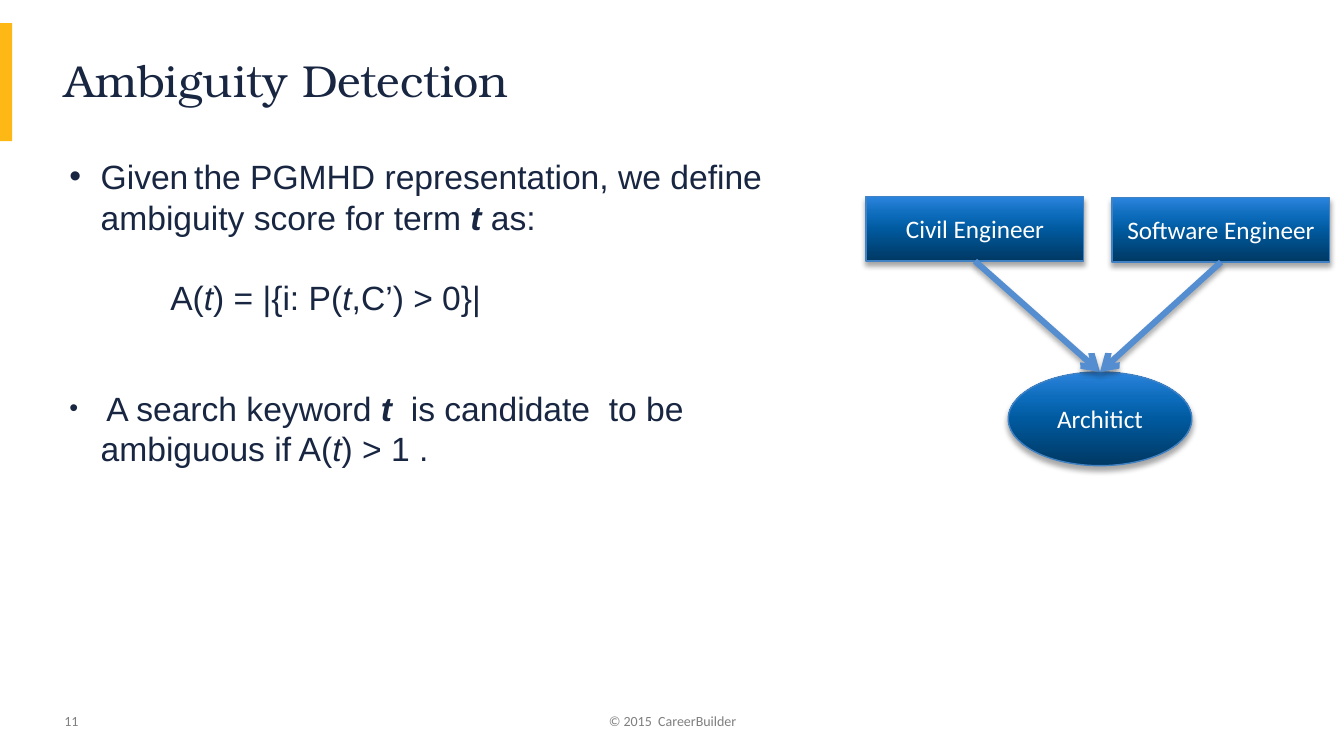
from pptx import Presentation
from pptx.dml.color import RGBColor
from pptx.enum.shapes import MSO_CONNECTOR, MSO_SHAPE
from pptx.enum.text import MSO_ANCHOR, PP_ALIGN
from pptx.oxml import parse_xml
from pptx.oxml.ns import nsdecls
from pptx.util import Inches, Pt

NAVY, GOLD, WHITE = "182642", "FDB816", "FFFFFF"
STOPS = [(0, "003863"), (50, "005A9F"), (70, "0B6AB9"), (100, "2B84DC")]


def rgb(code):
    return RGBColor.from_string(code)


def put(parent, xml, spot=None):
    tag, rest = xml.split(" ", 1)
    node = parse_xml(f"{tag} {nsdecls('a')} {rest}")
    parent.insert(len(parent) if spot is None else spot, node)


deck = Presentation()
deck.slide_width, deck.slide_height = Inches(13.33), Inches(7.5)
slide = deck.slides.add_slide(deck.slide_layouts[5])
shapes = slide.shapes

# Accent bar
bar = shapes.add_shape(MSO_SHAPE.RECTANGLE, 0, Inches(0.23), Inches(0.12), Inches(1.17))
bar.shadow.inherit = False
bar.fill.solid()
bar.fill.fore_color.rgb = rgb(GOLD)
bar.line.fill.background()

# Title
title = shapes.title
title.left, title.top = Inches(0.54), Inches(0.29)
title.width, title.height = Inches(12.25), Inches(1.06)
title.text_frame.text = "Ambiguity Detection"
title.text_frame.vertical_anchor = MSO_ANCHOR.MIDDLE
para = title.text_frame.paragraphs[0]
para.alignment = PP_ALIGN.LEFT
para.line_spacing = 0.9
para.font.size, para.font.name = Pt(32), "TeX Gyre Bonum"
para.font.color.rgb = rgb(NAVY)

# Footer and page number
for text, left, width, align, tone in [
    ("© 2015  CareerBuilder", 4.42, 4.5, PP_ALIGN.CENTER, "7F7F7F"),
    ("11", 0.54, 3, PP_ALIGN.LEFT, "808080"),
]:
    frame = shapes.add_textbox(Inches(left), Inches(6.95), Inches(width), Inches(0.4)).text_frame
    frame.word_wrap = True
    frame.vertical_anchor = MSO_ANCHOR.MIDDLE
    para = frame.paragraphs[0]
    para.text, para.alignment = text, align
    para.font.size, para.font.name = Pt(10), "Calibri"
    para.font.color.rgb = rgb(tone)

# Body: bullet flag, space before, runs as (text, style)
BODY = [
    (True, 0, [("Given", ""), (" ", "small"),
               ("the PGMHD representation, we define ambiguity score for term ", ""),
               ("t", "bold italic"), (" as:", "")]),
    (False, 29, [("A(", ""), ("t", "italic"), (") = |{i: P(", ""),
                 ("t", "italic"), (",C’) > 0}|", "")]),
    (True, 50, [(" ", "small"), ("A search keyword ", ""), ("t  ", "bold italic"),
                ("is candidate  to be ambiguous if A(", ""), ("t", "italic"), (") > 1 .", "")]),
]
frame = shapes.add_textbox(Inches(0.59), Inches(1.5), Inches(7.28), Inches(3.84)).text_frame
frame.word_wrap = True
for row, (dot, gap, runs) in enumerate(BODY):
    para = frame.add_paragraph() if row else frame.paragraphs[0]
    para.line_spacing, para.space_before = Pt(28.8), Pt(gap)
    props = para._p.get_or_add_pPr()
    props.set("marL", str(Inches(0.31 if dot else 1)))
    if dot:
        props.set("indent", str(-Inches(0.31)))
        put(props, '<a:buFont typeface="Arial"/>')
        put(props, '<a:buChar char="•"/>')
    for text, style in runs:
        run = para.add_run()
        run.text = text
        small = style == "small"
        run.font.size, run.font.name = Pt(18 if small else 24), "Calibri" if small else "Arial"
        run.font.bold, run.font.italic = "bold" in style, "italic" in style
        run.font.color.rgb = rgb(NAVY)

# Diagram nodes
SHADE = ('<a:effectLst ><a:outerShdw blurRad="50800" dist="38100" dir="5400000" rotWithShape="0">'
         '<a:srgbClr val="000000"><a:alpha val="35000"/></a:srgbClr></a:outerShdw></a:effectLst>')
marks = "".join(f'<a:gs pos="{pos * 1000}"><a:srgbClr val="{code}"/></a:gs>' for pos, code in STOPS)
GRAD = f'<a:gradFill ><a:gsLst>{marks}</a:gsLst><a:lin ang="16200000" scaled="0"/></a:gradFill>'
nodes = []
for text, kind, left, top, width, height in [
    ("Civil Engineer", MSO_SHAPE.RECTANGLE, 8.59, 1.95, 2.16, 0.64),
    ("Software Engineer", MSO_SHAPE.RECTANGLE, 11.03, 1.96, 2.16, 0.64),
    ("Architict", MSO_SHAPE.OVAL, 10, 3.69, 1.82, 0.93),
]:
    node = shapes.add_shape(kind, Inches(left), Inches(top), Inches(width), Inches(height))
    node.line.color.rgb, node.line.width = rgb("4082C4"), Pt(1)
    put(node._element.spPr, GRAD, 2)
    put(node._element.spPr, SHADE)
    node.text_frame.text = text
    node.text_frame.vertical_anchor = MSO_ANCHOR.MIDDLE
    para = node.text_frame.paragraphs[0]
    para.alignment = PP_ALIGN.CENTER
    para.font.size, para.font.name = Pt(18), "Calibri"
    para.font.color.rgb = rgb(WHITE)
    nodes.append(node)

# Arrows from each job to the shared term
*jobs, term = nodes
for job in jobs:
    link = shapes.add_connector(MSO_CONNECTOR.STRAIGHT, 0, 0, 0, 0)
    link.begin_connect(job, 2)
    link.end_connect(term, 0)
    link.line.color.rgb, link.line.width = rgb("548ED0"), Pt(4.33)
    put(link.line._get_or_add_ln(), '<a:tailEnd type="arrow"/>')
    put(link._element.spPr, SHADE)

deck.save("out.pptx")
